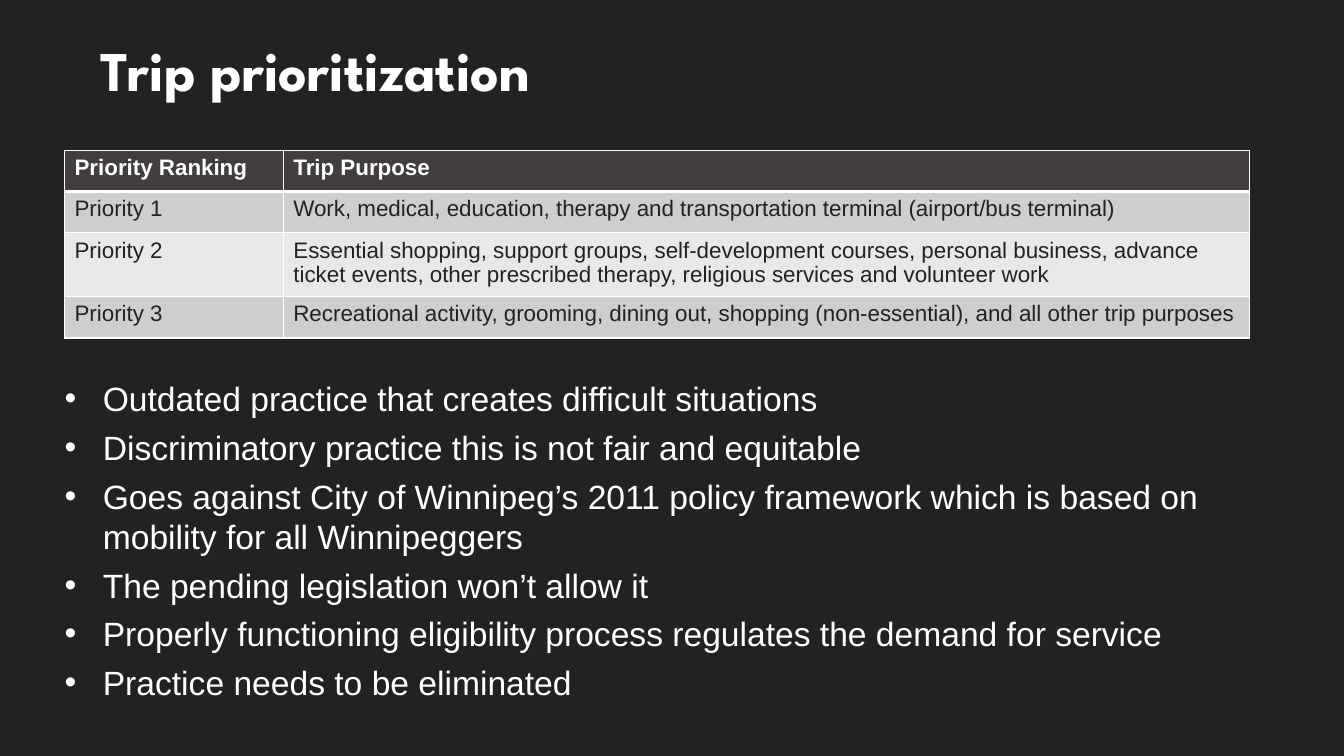
from lxml import etree
from pptx import Presentation
from pptx.dml.color import RGBColor
from pptx.enum import text
from pptx.oxml import ns
from pptx.util import Inches, Pt

TITLE = "Trip prioritization"
PRIORITIES = [
    ("Priority Ranking", "Trip Purpose"),
    ("Priority 1", "Work, medical, education, therapy and transportation terminal "
                   "(airport/bus terminal)"),
    ("Priority 2", "Essential shopping, support groups, self-development courses, "
                   "personal business, advance ticket events, other prescribed therapy, "
                   "religious services and volunteer work"),
    ("Priority 3", "Recreational activity, grooming, dining out, shopping "
                   "(non-essential), and all other trip purposes"),
]
CONCERNS = [
    "Outdated practice that creates difficult situations",
    "Discriminatory practice this is not fair and equitable",
    "Goes against City of Winnipeg’s 2011 policy framework which is based on "
    "mobility for all Winnipeggers",
    "The pending legislation won’t allow it",
    "Properly functioning eligibility process regulates the demand for service",
    "Practice needs to be eliminated",
]
COLUMN_WIDTHS = (2.17, 9.58)
ROW_HEIGHTS = (0.41, 0.41, 0.59, 0.41)
LEFT = 0.64
BULLET_INDENT = 0.38

WHITE = RGBColor(0xFF, 0xFF, 0xFF)
DARK = RGBColor(0x22, 0x22, 0x22)
HEADER = RGBColor(0x41, 0x3E, 0x3D)
BANDS = (RGBColor(0xE9, 0xE8, 0xE8), RGBColor(0xCF, 0xCE, 0xCE))


def style(para, size, color, name="Arial", bold=False):
    font = para.font
    font.name, font.size, font.bold = name, Pt(size), bold
    font.color.rgb = color


def add_frame(page, left, top, width, height):
    """Add a wrapping text box without margins and return its text frame."""
    box = page.shapes.add_textbox(*map(Inches, (left, top, width, height)))
    frame = box.text_frame
    frame.word_wrap = True
    frame.margin_left = frame.margin_top = frame.margin_right = frame.margin_bottom = 0
    return frame


def add_bullet(para):
    props = para._p.get_or_add_pPr()
    props.set("marL", str(Inches(BULLET_INDENT)))
    props.set("indent", str(-Inches(BULLET_INDENT)))
    etree.SubElement(props, ns.qn("a:buFont")).set("typeface", "Arial")
    etree.SubElement(props, ns.qn("a:buChar")).set("char", "•")


def set_borders(cell, widths):
    """Draw white borders, with widths in points by side, beneath the cell's fill."""
    props = cell._tc.get_or_add_tcPr()
    for place, (side, width) in enumerate(widths.items()):
        line = etree.Element(ns.qn(f"a:ln{side}"), w=str(Pt(width)))
        fill = etree.SubElement(line, ns.qn("a:solidFill"))
        etree.SubElement(fill, ns.qn("a:srgbClr")).set("val", str(WHITE))
        props.insert(place, line)


def add_priorities(page):
    table = page.shapes.add_table(
        len(PRIORITIES), len(COLUMN_WIDTHS), Inches(LEFT), Inches(1.49),
        Inches(sum(COLUMN_WIDTHS)), Inches(sum(ROW_HEIGHTS))).table
    for column, width in zip(table.columns, COLUMN_WIDTHS):
        column.width = Inches(width)
    for r, (row, height, words) in enumerate(zip(table.rows, ROW_HEIGHTS, PRIORITIES)):
        row.height = Inches(height)
        is_header = r == 0
        for cell, wording in zip(row.cells, words):
            cell.text = wording
            style(cell.text_frame.paragraphs[0], 16, WHITE if is_header else DARK,
                  bold=is_header)
            cell.fill.solid()
            cell.fill.fore_color.rgb = HEADER if is_header else BANDS[r % 2]
            set_borders(cell, {"L": 1, "R": 1, "T": 3 if r == 1 else 1,
                               "B": 3 if is_header else 1})


def main():
    deck = Presentation()
    deck.slide_width, deck.slide_height = Inches(13.33), Inches(7.5)
    page = deck.slides.add_slide(deck.slide_layouts[6])
    page.background.fill.solid()
    page.background.fill.fore_color.rgb = DARK

    title = add_frame(page, 1, 0.35, 11.17, 0.67)
    title.vertical_anchor = text.MSO_ANCHOR.MIDDLE
    title.text = TITLE
    style(title.paragraphs[0], 40, WHITE, "League Spartan", bold=True)

    add_priorities(page)

    concerns = add_frame(page, LEFT, 3.75, 12.33, 3)
    concerns.text = "\n".join(CONCERNS)
    for para in concerns.paragraphs:
        style(para, 24, WHITE)
        para.space_before = Pt(6)
        add_bullet(para)

    deck.save("out.pptx")


if __name__ == "__main__":
    main()
